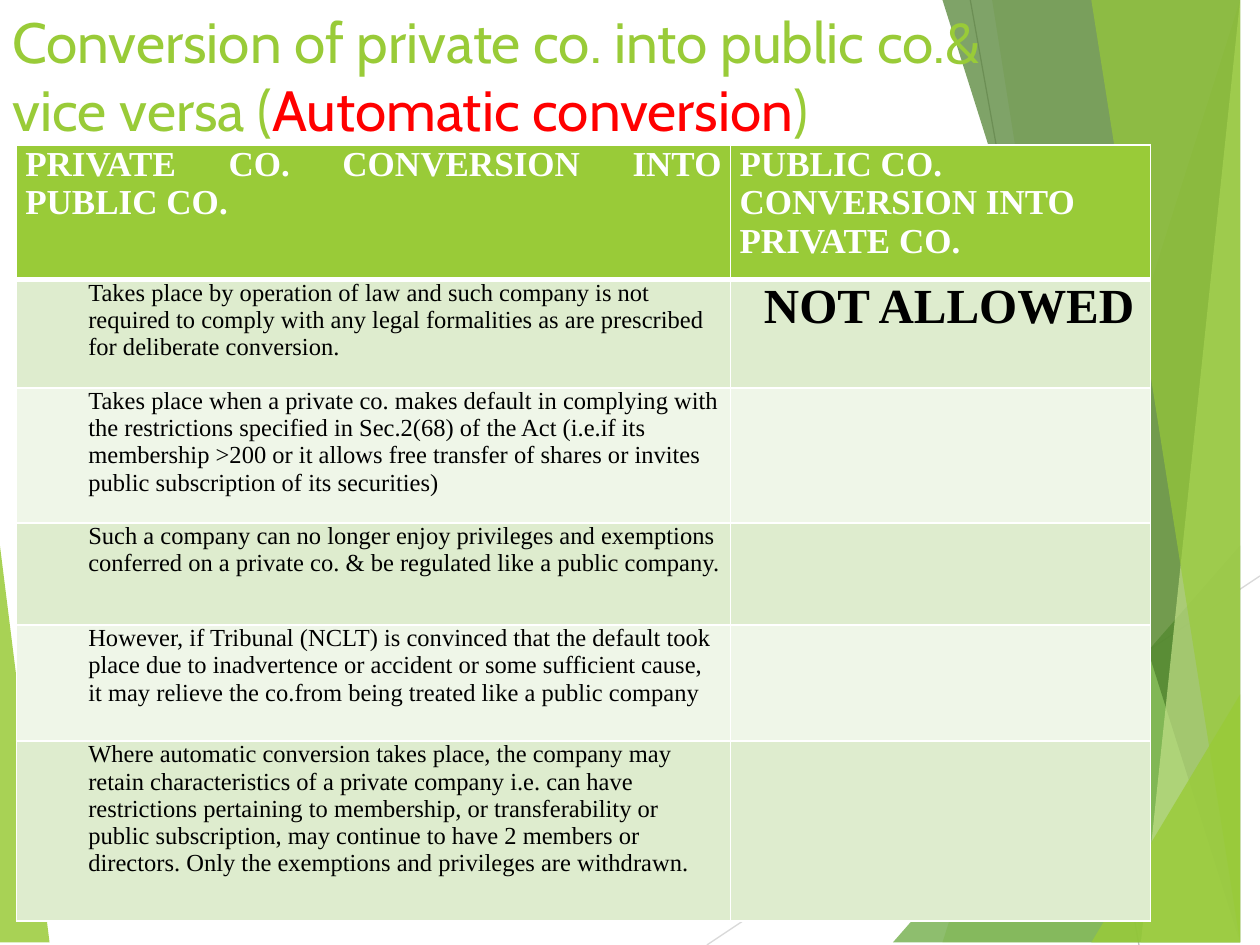
from typing import NamedTuple

from lxml import etree
from pptx import Presentation
from pptx.dml.color import RGBColor
from pptx.enum.shapes import MSO_CONNECTOR
from pptx.enum.text import MSO_ANCHOR, MSO_AUTO_SIZE, PP_ALIGN
from pptx.oxml.ns import qn
from pptx.util import Cm, Pt

STRAIGHT = MSO_CONNECTOR.STRAIGHT
LEFT, JUSTIFY = PP_ALIGN.LEFT, PP_ALIGN.JUSTIFY
MIDDLE, NO_AUTOFIT = MSO_ANCHOR.MIDDLE, MSO_AUTO_SIZE.NONE

WIDTH, HEIGHT = 25.4, 19.05
TITLE_FONT, TABLE_FONT = "Cabin", "Times New Roman"
COLORS = {
    "lime": "99CB38",
    "green": "63A537",
    "forest": "4A7C29",
    "pale lime": "C2E088",
    "band": "DEECCE",
    "light band": "EFF6E8",
    "red": "FF0000",
    "black": "000000",
    "white": "FFFFFF",
    "gray": "BFBFBF",
    "light gray": "D9D9D9",
}


class Facet(NamedTuple):
    """A pane between a slanted edge and a side of the slide, in cm."""
    top_x: float
    top_y: float
    bottom_x: float
    color: str
    opacity: int
    side_x: float = WIDTH


class Ray(NamedTuple):
    start: tuple[float, float]
    end: tuple[float, float]
    color: str


class CellText(NamedTuple):
    text: str
    size: int = 14
    bold: bool = False
    color: str = "black"
    indent: float = 1.27
    alignment: PP_ALIGN = LEFT


class Row(NamedTuple):
    height: float
    fill: str
    cells: list[CellText]


RAYS = [
    Ray((14.25, HEIGHT), (WIDTH, 11.61), "light gray"),
    Ray((19.56, 0), (22.96, HEIGHT), "gray"),
]
LEFT_FACET = Facet(0, 11.15, 1.24, "lime", 85, side_x=0)
RIGHT_FACETS = [
    Facet(24.77, 0, 19.15, "lime", 30),
    Facet(20.02, 0, 23.34, "lime", 20),
    Facet(WIDTH, 10.9, 18.44, "green", 72),
    Facet(19.48, 0, 24.64, "forest", 70),
    Facet(24.92, 0, 23.04, "pale lime", 70),
    Facet(22.43, 0, 25.04, "lime", 65),
    Facet(WIDTH, 13.59, 22.38, "lime", 80),
]
TITLE_RUNS = [
    ("Conversion of private co. into public co.& vice versa (", "lime"),
    ("Automatic conversion", "red"),
    (")", "lime"),
]
COLUMN_WIDTHS = [14.4, 8.46]
ROWS = [
    Row(2.72, "lime", [
        CellText("PRIVATE CO. CONVERSION INTO PUBLIC CO.", 20, True, "white", 0, JUSTIFY),
        CellText("PUBLIC CO. CONVERSION INTO PRIVATE CO.", 20, True, "white", 0),
    ]),
    Row(2.18, "band", [
        CellText("Takes place by operation of law and such company is not required to comply "
                 "with any legal formalities as are prescribed for deliberate conversion."),
        CellText("NOT ALLOWED", 28, True, indent=0.49, alignment=JUSTIFY),
    ]),
    Row(2.72, "light band", [
        CellText("Takes place when a private co. makes default in complying with the "
                 "restrictions specified in Sec.2(68) of the Act (i.e.if its membership >200 "
                 "or it allows free transfer of shares or invites public subscription of its "
                 "securities)"),
    ]),
    Row(2.06, "band", [
        CellText("Such a company can no longer enjoy privileges and exemptions conferred on a "
                 "private co. & be regulated like a public company."),
    ]),
    Row(2.34, "light band", [
        CellText("However, if Tribunal (NCLT) is convinced that the default took place due to "
                 "inadvertence or accident or some sufficient cause, it may relieve the "
                 "co.from being treated like a public company"),
    ]),
    Row(3.63, "band", [
        CellText("Where automatic conversion takes place, the company may retain "
                 "characteristics of a private company i.e. can have restrictions pertaining "
                 "to membership, or transferability or public subscription, may continue to "
                 "have 2 members or directors. Only the exemptions and privileges are "
                 "withdrawn."),
    ]),
]


def rgb(name: str) -> RGBColor:
    return RGBColor.from_string(COLORS[name])


def draw_facet(slide, facet: Facet) -> None:
    points = [(facet.bottom_x, HEIGHT), (facet.side_x, HEIGHT)]
    if facet.top_x != facet.side_x:
        points.append((facet.side_x, facet.top_y))
    builder = slide.shapes.build_freeform(facet.top_x, facet.top_y, scale=Cm(1))
    builder.add_line_segments(points, close=True)
    shape = builder.convert_to_shape()
    shape.shadow.inherit = False
    shape.line.fill.background()
    shape.fill.solid()
    shape.fill.fore_color.rgb = rgb(facet.color)
    color = shape.element.spPr.find(qn("a:solidFill"))[0]
    etree.SubElement(color, qn("a:alpha"), val=str(facet.opacity * 1000))


def draw_ray(slide, ray: Ray) -> None:
    ends = [Cm(value) for value in ray.start + ray.end]
    connector = slide.shapes.add_connector(STRAIGHT, *ends)
    connector.line.color.rgb = rgb(ray.color)
    connector.line.width = Pt(0.75)
    etree.SubElement(connector.element.spPr, qn("a:effectLst"))


def draw_title(slide) -> None:
    title = slide.shapes.title
    title.left, title.top, title.width, title.height = Cm(0), Cm(0), Cm(21.23), Cm(3)
    frame = title.text_frame
    frame.word_wrap = True
    frame.auto_size = NO_AUTOFIT
    frame.vertical_anchor = MIDDLE
    paragraph = frame.paragraphs[0]
    paragraph.alignment = LEFT
    for text, color in TITLE_RUNS:
        run = paragraph.add_run()
        run.text = text
        run.font.name = TITLE_FONT
        run.font.size = Pt(32.4)
        run.font.color.rgb = rgb(color)
    # The placeholder comes first on a new slide; bring it in front of the facets.
    title.element.getparent().append(title.element)


def set_borders(cell, row_index: int) -> None:
    """White rules, thicker between the header and the body."""
    thick_side = {0: "lnB", 1: "lnT"}.get(row_index)
    properties = cell._tc.get_or_add_tcPr()
    for side in ("lnL", "lnR", "lnT", "lnB"):
        width = Pt(3 if side == thick_side else 1)
        line = etree.SubElement(properties, qn(f"a:{side}"), w=str(width))
        fill = etree.SubElement(line, qn("a:solidFill"))
        etree.SubElement(fill, qn("a:srgbClr"), val=COLORS["white"])


def write_cell(cell, content: CellText) -> None:
    paragraph = cell.text_frame.paragraphs[0]
    paragraph.text = content.text
    paragraph.alignment = content.alignment
    paragraph.font.name = TABLE_FONT
    paragraph.font.size = Pt(content.size)
    paragraph.font.bold = content.bold
    paragraph.font.color.rgb = rgb(content.color)
    paragraph._p.get_or_add_pPr().set("marL", str(Cm(content.indent)))


def draw_table(slide) -> None:
    height = sum(row.height for row in ROWS)
    frame = slide.shapes.add_table(len(ROWS), len(COLUMN_WIDTHS), Cm(0.33), Cm(2.92),
                                   Cm(sum(COLUMN_WIDTHS)), Cm(height))
    table = frame.table
    for column, width in zip(table.columns, COLUMN_WIDTHS):
        column.width = Cm(width)
    for row_index, row in enumerate(ROWS):
        table.rows[row_index].height = Cm(row.height)
        for cell in table.rows[row_index].cells:
            set_borders(cell, row_index)
            cell.fill.solid()
            cell.fill.fore_color.rgb = rgb(row.fill)
            cell.margin_left = cell.margin_right = Cm(0.18)
            cell.margin_top = cell.margin_bottom = Cm(0)
        for cell, content in zip(table.rows[row_index].cells, row.cells):
            write_cell(cell, content)


def main() -> None:
    presentation = Presentation()
    presentation.slide_width, presentation.slide_height = Cm(WIDTH), Cm(HEIGHT)
    slide = presentation.slides.add_slide(presentation.slide_layouts[5])
    draw_facet(slide, LEFT_FACET)
    for ray in RAYS:
        draw_ray(slide, ray)
    for facet in RIGHT_FACETS:
        draw_facet(slide, facet)
    draw_title(slide)
    draw_table(slide)
    presentation.save("out.pptx")


if __name__ == "__main__":
    main()
